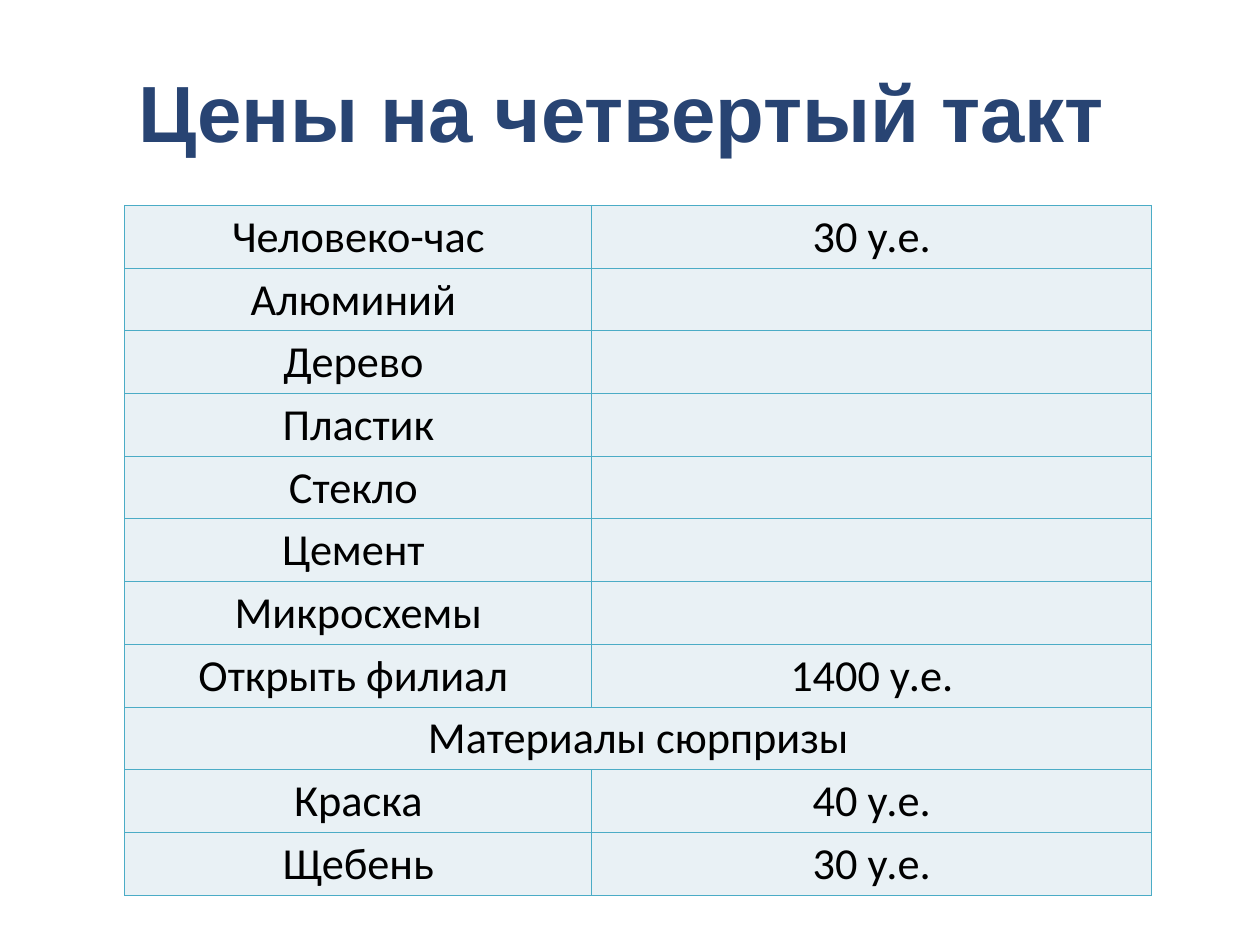
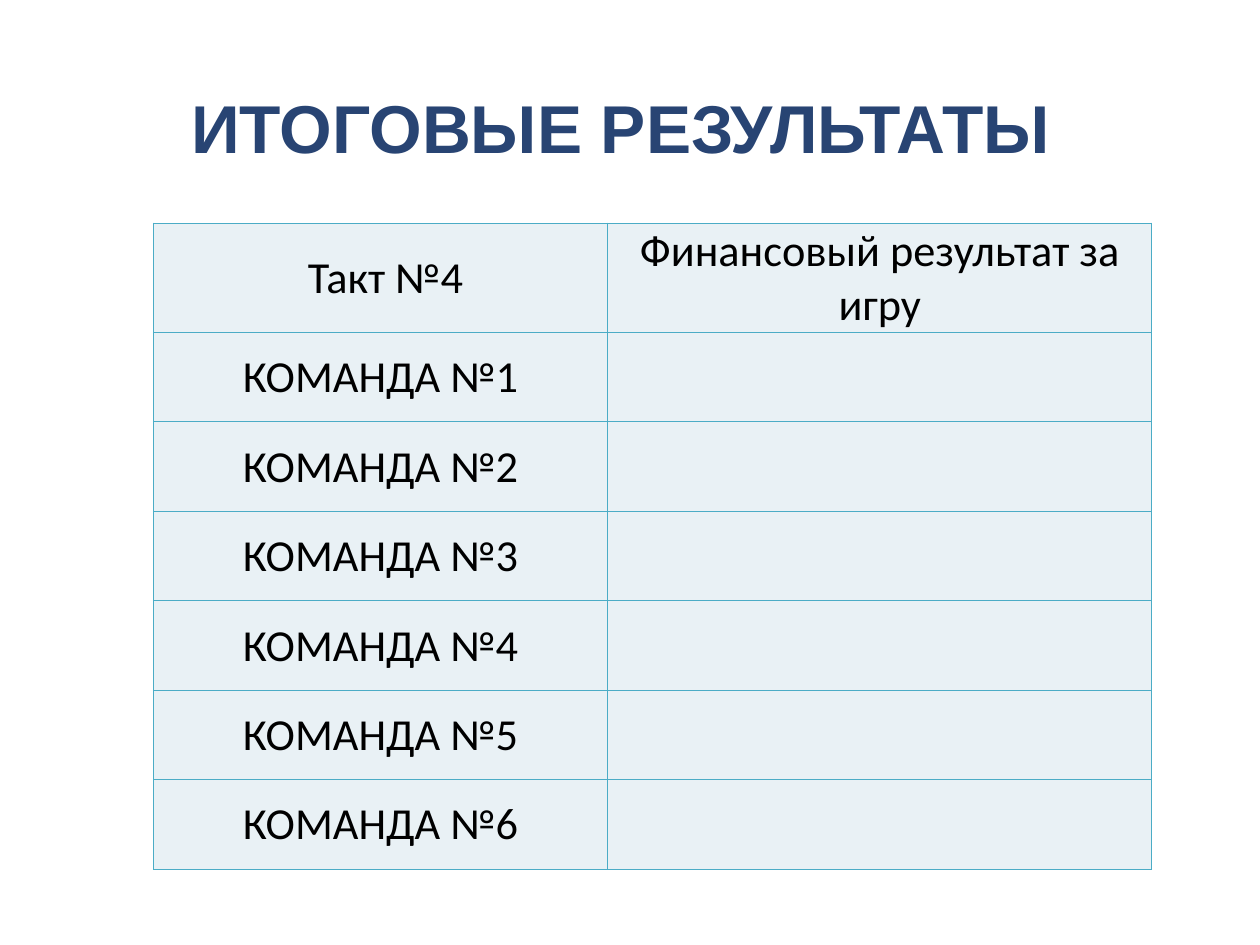
from pptx import Presentation
from pptx.dml.color import RGBColor
from pptx.enum.text import MSO_ANCHOR, MSO_AUTO_SIZE, PP_ALIGN
from pptx.oxml.ns import qn
from pptx.util import Inches, Pt
from lxml import etree

MIDDLE = MSO_ANCHOR.MIDDLE
NO_AUTOFIT = MSO_AUTO_SIZE.NONE
CENTER = PP_ALIGN.CENTER

# Shared style
NAVY = RGBColor(0x28, 0x44, 0x73)
BLACK = RGBColor(0x00, 0x00, 0x00)
PALE_BLUE = RGBColor(0xE9, 0xF1, 0xF5)
TEAL = RGBColor(0x4B, 0xAC, 0xC6)
TITLE_FONT = "Arial"
TABLE_FONT = "Calibri"
TITLE_ONLY = 5
CELL_MARGIN = Inches(0.01)

# Contents: a row with one entry spans the whole table
PRICES = [
    ("Человеко-час", "30 у.е."),
    ("Алюминий ", ""),
    ("Дерево ", ""),
    ("Пластик", ""),
    ("Стекло ", ""),
    ("Цемент ", ""),
    ("Микросхемы", ""),
    ("Открыть филиал ", "1400 у.е."),
    ("Материалы сюрпризы",),
    ("Краска", "40 у.е."),
    ("Щебень", "30 у.е."),
]
RESULTS = [(" Такт №4", "Финансовый результат за игру")]
RESULTS += [(f"КОМАНДА №{number}", "") for number in range(1, 7)]


def style_paragraph(para, font_name, size, color, bold=False):
    para.alignment = CENTER
    para.font.name = font_name
    para.font.size = Pt(size)
    para.font.color.rgb = color
    para.font.bold = bold


def add_page(deck, title, left, top, size):
    """Add a slide with a formatted title."""
    page = deck.slides.add_slide(deck.slide_layouts[TITLE_ONLY])
    box = page.shapes.title
    box.left, box.top = Inches(left), Inches(top)
    box.width, box.height = Inches(12.14), Inches(1.88)
    frame = box.text_frame
    frame.text = title
    frame.word_wrap = True
    frame.auto_size = NO_AUTOFIT
    frame.vertical_anchor = MIDDLE
    frame.margin_left = frame.margin_right = Inches(0.14)
    frame.margin_top = frame.margin_bottom = Inches(0.07)
    style_paragraph(frame.paragraphs[0], TITLE_FONT, size, NAVY, bold=True)
    return page


def add_borders(cell):
    properties = cell._tc.get_or_add_tcPr()
    for side in ("a:lnL", "a:lnR", "a:lnT", "a:lnB"):
        line = etree.SubElement(properties, qn(side), w=str(Pt(1)))
        fill = etree.SubElement(line, qn("a:solidFill"))
        etree.SubElement(fill, qn("a:srgbClr"), val=str(TEAL))


def format_cell(cell):
    add_borders(cell)
    cell.fill.solid()
    cell.fill.fore_color.rgb = PALE_BLUE
    cell.vertical_anchor = MIDDLE
    cell.margin_left = cell.margin_right = cell.margin_top = CELL_MARGIN
    cell.margin_bottom = 0


def add_grid(page, rows, left, top, column_widths, height):
    """Add a two-column table with equal rows."""
    frame = page.shapes.add_table(
        len(rows), len(column_widths), Inches(left), Inches(top),
        Inches(sum(column_widths)), Inches(height))
    table = frame.table
    table.first_row = table.horz_banding = False
    for column, width in zip(table.columns, column_widths):
        column.width = Inches(width)
    for cell in table.iter_cells():
        format_cell(cell)
    for row_index, row in enumerate(rows):
        for column_index, text in enumerate(row):
            if text:
                cell = table.cell(row_index, column_index)
                cell.text = text
                style_paragraph(cell.text_frame.paragraphs[0],
                                TABLE_FONT, 36, BLACK)
        if len(row) == 1:
            last = table.cell(row_index, len(column_widths) - 1)
            table.cell(row_index, 0).merge(last)


def main():
    deck = Presentation()
    deck.slide_width, deck.slide_height = Inches(14.22), Inches(10.67)

    # Prices
    page = add_page(deck, "Цены на четвертый такт ", 1.07, 0.31, 64.8)
    add_grid(page, PRICES, 1.41, 2.32, (5.27, 6.32), 7.79)

    # Final results
    page = add_page(deck, "ИТОГОВЫЕ РЕЗУЛЬТАТЫ ", 1.04, 0.49, 55)
    add_grid(page, RESULTS, 1.73, 2.52, (5.13, 6.14), 7.07)

    deck.save("out.pptx")


if __name__ == "__main__":
    main()
